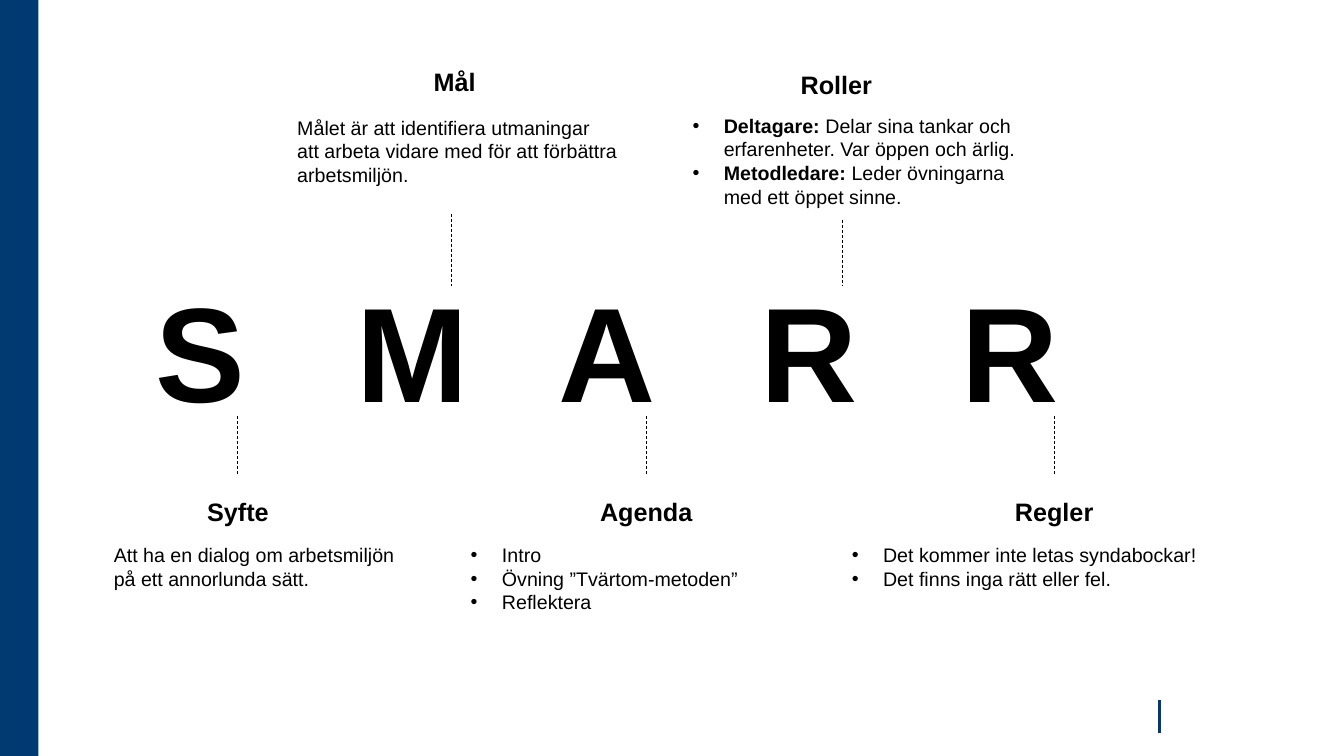
from lxml.etree import SubElement
from pptx import Presentation
from pptx.dml.color import RGBColor
from pptx.enum.dml import MSO_LINE
from pptx.enum.shapes import MSO_CONNECTOR, MSO_SHAPE
from pptx.enum.text import MSO_AUTO_SIZE, PP_ALIGN
from pptx.oxml.ns import qn
from pptx.util import Inches, Pt

COLORS = {"navy": "003A70", "black": "000000"}
HEAD = {"size": Pt(18), "bold": True}
BODY = {"size": Pt(14)}
GIANT = {"size": Pt(96), "bold": True}

deck = Presentation()
deck.slide_width, deck.slide_height = Inches(13.33), Inches(7.5)
slide = deck.slides.add_slide(deck.slide_layouts[6])


def add_text(box, lines, style, align=PP_ALIGN.LEFT, bullet=False, tabs=()):
    """Add a text box; in a bulleted line, words up to a colon are bold."""
    shape = slide.shapes.add_textbox(*map(Inches, box))
    frame = shape.text_frame
    frame.word_wrap = True
    frame.auto_size = MSO_AUTO_SIZE.SHAPE_TO_FIT_TEXT
    for i, line in enumerate(lines):
        para = frame.add_paragraph() if i else frame.paragraphs[0]
        para.alignment = align
        props = para._p.get_or_add_pPr()
        if bullet:
            props.set("marL", str(Inches(0.31)))
            props.set("indent", str(-Inches(0.31)))
            SubElement(props, qn("a:buFont"), typeface="Arial")
            SubElement(props, qn("a:buChar"), char="•")
        if tabs:
            stops = SubElement(props, qn("a:tabLst"))
            for stop in tabs:
                SubElement(stops, qn("a:tab"), pos=str(Inches(stop)), algn="l")
        label, colon, rest = line.partition(": ")
        if colon:
            para.text = label + colon
            para.runs[0].font.bold = True
            para.add_run().text = rest
        else:
            para.text = line
        para.font.name = "Arial"
        for run in para.runs:
            run.font.name = "Arial"
            run.font.color.rgb = RGBColor.from_string(COLORS["black"])
            for key, value in style.items():
                setattr(run.font, key, value)
    return frame


def add_line(x, top, bottom, color, width, dash=None):
    line = slide.shapes.add_connector(
        MSO_CONNECTOR.STRAIGHT, Inches(x), Inches(top), Inches(x), Inches(bottom))
    line.line.color.rgb = RGBColor.from_string(COLORS[color])
    line.line.width = Pt(width)
    line.line.dash_style = dash
    SubElement(line._element.spPr, qn("a:effectLst"))


# Frame of the page
add_line(11.5, 6.94, 7.27, "navy", 1.5)
band = slide.shapes.add_shape(MSO_SHAPE.RECTANGLE, 0, 0, Inches(0.38), deck.slide_height)
band.shadow.inherit = False
band.fill.solid()
band.fill.fore_color.rgb = RGBColor.from_string(COLORS["navy"])
band.line.fill.background()

# Five letters, two inches apart
word = add_text((-0.26, 2.61, 13.33, 1.72), ["\t".join("SMARR")], GIANT, tabs=(2, 4, 6, 8))
word.margin_left = Inches(1.8)

# Title, title box, body box, bullets, body lines, (x, top, bottom) of the dashed line
parts = [
    ("Syfte", (1.21, 4.87, 2.3, 0.4), (1.03, 5.34, 3.22, 0.57), False,
     ["Att ha en dialog om arbetsmiljön på ett annorlunda sätt."], (2.35, 4.13, 4.7)),
    ("Mål", (3.38, 0.61, 2.26, 0.4), (2.85, 1.1, 3.47, 0.81), False,
     ["Målet är att identifiera utmaningar \vatt arbeta vidare med för att förbättra "
      "arbetsmiljön."], (4.48, 2.12, 2.84)),
    ("Agenda", (5.26, 4.87, 2.3, 0.4), (4.57, 5.34, 3.85, 0.81), True,
     ["Intro", "Övning ”Tvärtom-metoden”", "Reflektera"], (6.41, 4.13, 4.7)),
    ("Roller", (6.44, 0.64, 3.71, 0.4), (6.77, 1.08, 3.71, 1.51), True,
     ["Deltagare: Delar sina tankar och erfarenheter. Var öppen och ärlig.",
      "Metodledare: Leder övningarna med ett öppet sinne."], (8.35, 2.18, 2.84)),
    ("Regler", (9.2, 4.87, 2.51, 0.4), (8.35, 5.34, 4.31, 0.57), True,
     ["Det kommer inte letas syndabockar!", "Det finns inga rätt eller fel."],
     (10.46, 4.13, 4.7)),
]
for title, top_box, body_box, bullet, lines, dashes in parts:
    add_line(*dashes, "black", 0.5, MSO_LINE.DASH)
    add_text(top_box, [title], HEAD, PP_ALIGN.CENTER)
    add_text(body_box, lines, BODY, bullet=bullet)

deck.save("out.pptx")
